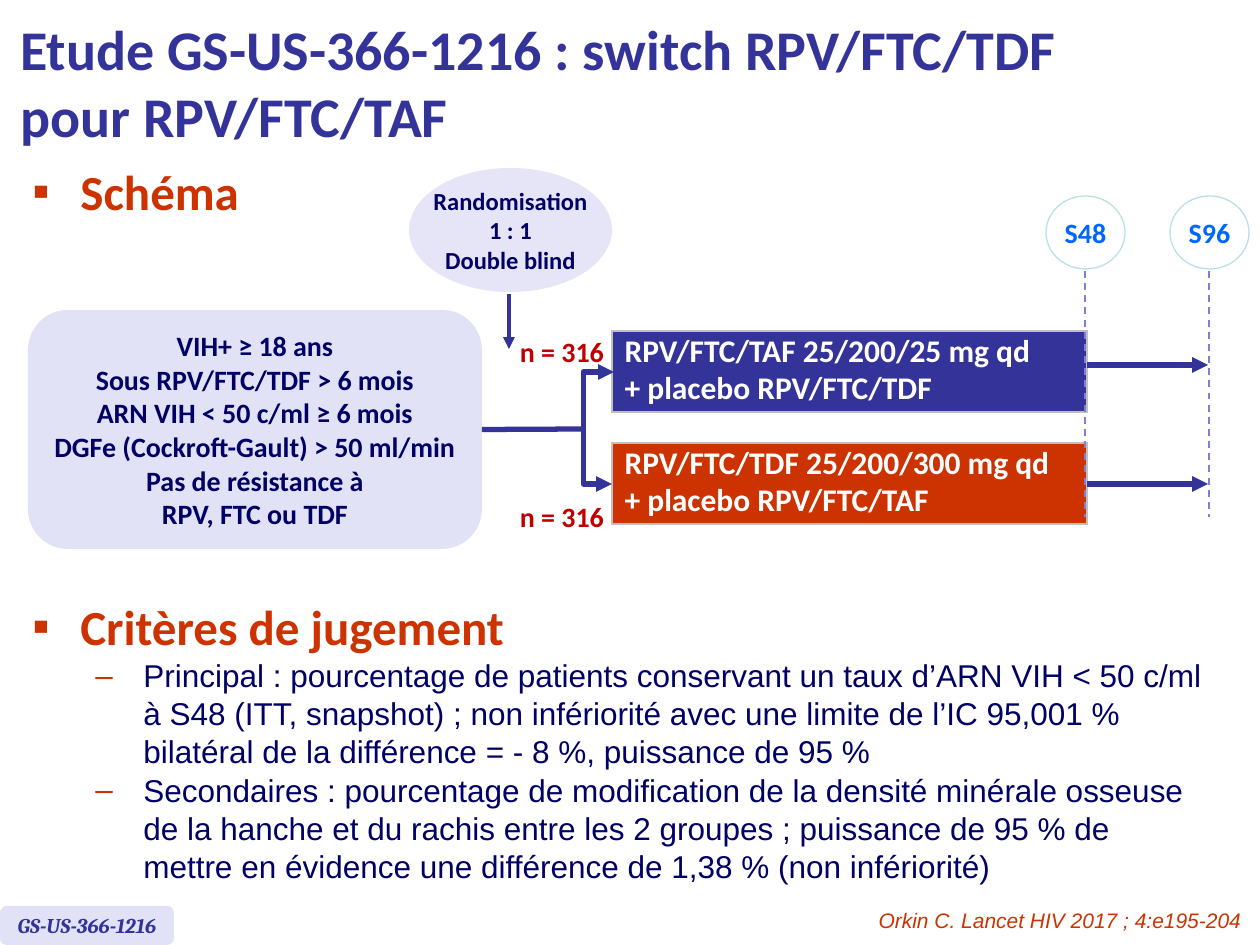
from dataclasses import dataclass
from lxml import etree
from pptx import Presentation
from pptx.dml.color import RGBColor as Rgb
from pptx.enum.dml import MSO_LINE as Dash
from pptx.enum.shapes import MSO_CONNECTOR as Conn, MSO_SHAPE as Kind
from pptx.enum.text import MSO_ANCHOR as Anchor, PP_ALIGN as Align
from pptx.oxml.ns import qn
from pptx.util import Pt

UNIT = 914400 / 126


@dataclass(frozen=True)
class Theme:
    navy: str = "333399"
    ink: str = "000066"
    rust: str = "CC3300"
    red: str = "C00000"
    blue: str = "0066FF"
    white: str = "FFFFFF"
    pale: str = "E2E2F6"
    mist: str = "E5E5F7"
    ring: str = "BBE0E3"
    dash: str = "7E7ED4"
    edge: str = "C0C0C0"
    face: str = "Calibri"
    plain: str = "Arial"
    serif: str = "Cambria"
    title: int = 32
    head: int = 28
    body: int = 18
    label: int = 16
    small: int = 14
    note: int = 12


T = Theme()


def px(*nums):
    return [round(n * UNIT) for n in nums]


def sub(node, tag, **attrs):
    return etree.SubElement(node, qn(tag), **attrs)


def style(para, size, color, face=T.face, bold=True, italic=False, align=Align.LEFT):
    para.alignment = align
    font = para.font
    font.name, font.size, font.bold, font.italic = face, Pt(size), bold, italic
    font.color.rgb = Rgb.from_string(color)


def write(frame, lines, size, color, wrap=False, anchor=Anchor.TOP, **look):
    frame.word_wrap = wrap
    frame.vertical_anchor = anchor
    frame.text = "\n".join(lines)
    for para in frame.paragraphs:
        style(para, size, color, **look)


def text(slide, box, lines, size, color, **look):
    write(slide.shapes.add_textbox(*px(*box)).text_frame, lines, size, color, **look)


def shape(slide, kind, box, fill, lines, size, color, ring=None, **look):
    item = slide.shapes.add_shape(kind, *px(*box))
    item.shadow.inherit = False
    item.fill.solid()
    item.fill.fore_color.rgb = Rgb.from_string(fill)
    if ring:
        item.line.color.rgb = Rgb.from_string(ring)
        item.line.width = Pt(0.75)
    else:
        item.line.fill.background()
    write(item.text_frame, lines, size, color, anchor=Anchor.MIDDLE,
          align=Align.CENTER, **look)
    return item


def link(slide, ends, color=T.navy, width=3, kind=Conn.STRAIGHT, dash=False, heads=()):
    item = slide.shapes.add_connector(kind, *px(*ends))
    item.line.color.rgb = Rgb.from_string(color)
    item.line.width = Pt(width)
    if dash:
        item.line.dash_style = Dash.DASH
    props = item._element.spPr
    for tag in heads:
        sub(props.find(qn("a:ln")), tag, type="triangle")
    sub(props, "a:effectLst")
    return item


def bullet(para, mark, left, hang):
    props = para._p.get_or_add_pPr()
    left, hang = px(left, hang)
    props.set("marL", str(left))
    props.set("indent", str(-hang))
    sub(sub(props, "a:buClr"), "a:srgbClr", val=T.rust)
    sub(props, "a:buFont", typeface=T.plain)
    sub(props, "a:buChar", char=mark)


def points(slide, box, head, items=()):
    frame = slide.shapes.add_textbox(*px(*box)).text_frame
    frame.word_wrap = True
    frame.text = "\n".join([head, *items])
    first, *rest = frame.paragraphs
    bullet(first, "▪", 48, 48)
    style(first, T.head, T.rust)
    for para in rest:
        para.level = 1
        para.space_before = Pt(0.8)
        bullet(para, "–", 111, 48)
        style(para, T.body, T.ink, T.plain, False)


def arm(slide, box, fill, lines):
    table = slide.shapes.add_table(1, 1, *px(*box)).table
    table.first_row = table.horz_banding = False
    cell = table.cell(0, 0)
    write(cell.text_frame, lines, T.body, T.white, wrap=None)
    cell.vertical_anchor = Anchor.MIDDLE
    for para in cell.text_frame.paragraphs:
        para.line_spacing = 0.8
    cell.text_frame.paragraphs[1].space_before = Pt(3.6)
    props = cell._tc.get_or_add_tcPr()
    for side in "LRTB":
        line = sub(props, f"a:ln{side}", w=str(Pt(1)))
        sub(sub(line, "a:solidFill"), "a:srgbClr", val=T.edge)
    cell.fill.solid()
    cell.fill.fore_color.rgb = Rgb.from_string(fill)


def visit(slide, x, y, name, top):
    link(slide, (x, top, x, 517), T.dash, 1, dash=True)
    shape(slide, Kind.OVAL, (x - 39, y, 79, 73), T.white, [name], T.label,
          T.blue, ring=T.ring)


def fork(slide, x, y, low):
    item = link(slide, (x + 2, y, x, low), kind=Conn.ELBOW,
                heads=("a:headEnd", "a:tailEnd"))
    geom = item._element.spPr.find(qn("a:prstGeom"))
    guides = geom.find(qn("a:avLst"))
    if guides is None:
        guides = sub(geom, "a:avLst")
    sub(guides, "a:gd", name="adj1", fmla="val 1550000")


def scheme(slide, x, y):
    entry = shape(slide, Kind.ROUNDED_RECTANGLE, (x, y + 142, 454, 239), T.pale, [
        "VIH+ ≥ 18 ans",
        "Sous RPV/FTC/TDF > 6 mois",
        "ARN VIH < 50 c/ml ≥ 6 mois",
        "DGFe (Cockroft-Gault) > 50 ml/min",
        "Pas de résistance à",
        "RPV, FTC ou TDF",
    ], T.label, T.ink)
    shape(slide, Kind.OVAL, (x + 381, y, 203, 124), T.mist,
          ["Randomisation", "1 : 1", "Double blind"], T.small, T.ink)
    link(slide, (x + 481, y + 126, x + 481, y + 181), width=2.25, heads=["a:tailEnd"])
    arms = [
        (163, 197, 160, T.navy, "RPV/FTC/TAF 25/200/25 mg qd", "+ placebo RPV/FTC/TDF"),
        (275, 316, 325, T.rust, "RPV/FTC/TDF 25/200/300 mg qd", "+ placebo RPV/FTC/TAF"),
    ]
    for top, mid, count, fill, *lines in arms:
        arm(slide, (x + 584, y + top, 475, 81), fill, lines)
        link(slide, (x + 1059, y + mid, x + 1180, y + mid), heads=["a:tailEnd"])
        text(slide, (x + 477, y + count, 114, 46), ["n = 316"], T.label, T.red,
             align=Align.CENTER)
    fork(slide, x + 584, y + 204, y + 316)
    trunk = link(slide, (x + 454, y + 261, x + 555, y + 261))
    trunk.begin_connect(entry, 3)
    visit(slide, x + 1057, y + 28, "S48", y + 103)
    visit(slide, x + 1181, y + 28, "S96", y + 103)


def footer(slide, y):
    shape(slide, Kind.ROUNDED_RECTANGLE, (0, y, 174, 39), T.pale, ["GS-US-366-1216"],
          T.note, T.navy, face=T.serif, italic=True)
    text(slide, (669, y - 5, 585, 38), ["Orkin C. Lancet HIV 2017 ; 4:e195-204"],
         T.note, T.rust, wrap=True, face=T.plain, bold=False, italic=True,
         align=Align.RIGHT)


def main():
    deck = Presentation()
    deck.slide_width, deck.slide_height = px(1260, 945)
    slide = deck.slides.add_slide(deck.slide_layouts[6])
    text(slide, (8, 6, 1129, 152),
         ["Etude GS-US-366-1216 : switch RPV/FTC/TDF\vpour RPV/FTC/TAF"],
         T.title, T.navy, wrap=True, anchor=Anchor.MIDDLE)
    points(slide, (20, 155, 372, 79), "Schéma")
    scheme(slide, 28, 168)
    points(slide, (20, 590, 1200, 301), "Critères de jugement", [
        "Principal : pourcentage de patients conservant un taux d’ARN VIH < 50 c/ml "
        "à S48 (ITT, snapshot) ; non infériorité avec une limite de l’IC 95,001 % "
        "bilatéral de la différence = - 8 %, puissance de 95 %",
        "Secondaires : pourcentage de modification de la densité minérale osseuse "
        "de la hanche et du rachis entre les 2 groupes ; puissance de 95 % de "
        "mettre en évidence une différence de 1,38 % (non infériorité)",
    ])
    footer(slide, 906)
    deck.save("out.pptx")


if __name__ == "__main__":
    main()
